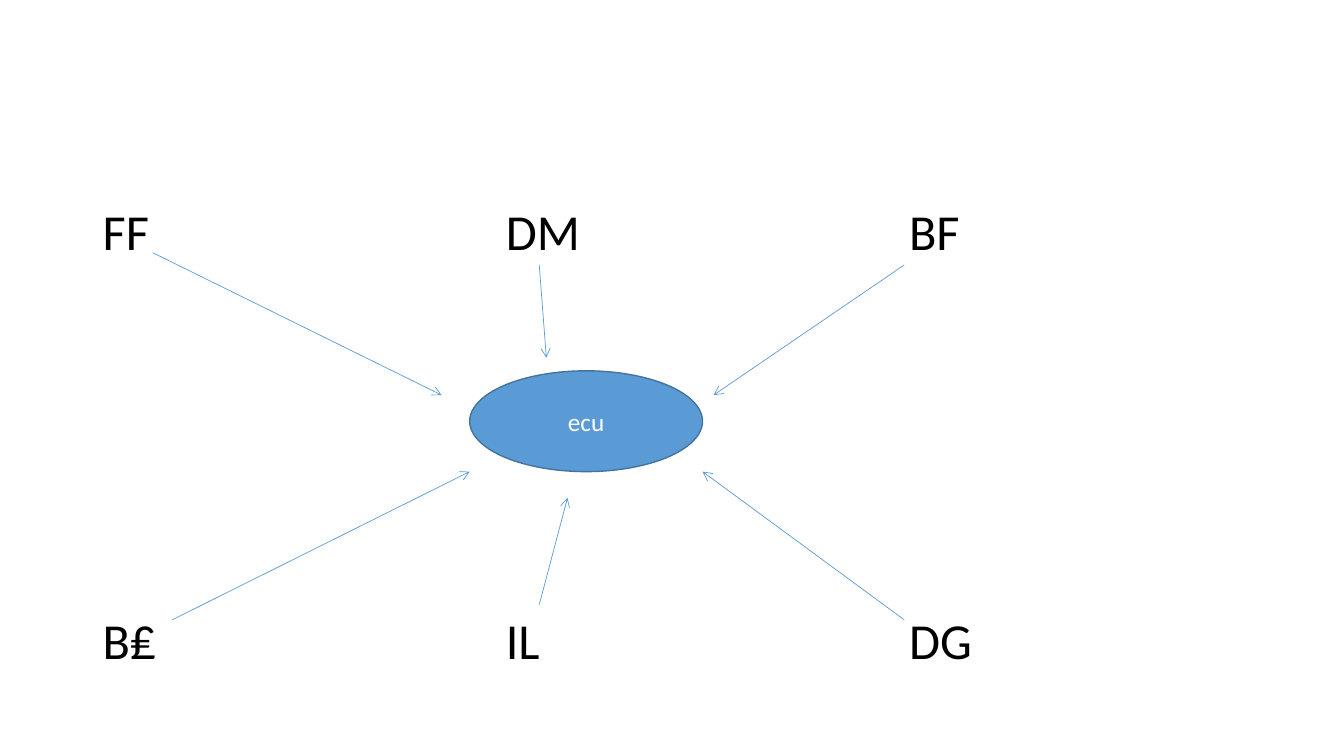
from dataclasses import dataclass
from lxml.etree import SubElement
from pptx import Presentation
from pptx.dml.color import RGBColor
from pptx.enum.shapes import MSO_CONNECTOR, MSO_SHAPE
from pptx.enum.text import MSO_ANCHOR, PP_ALIGN
from pptx.oxml.ns import qn
from pptx.util import Inches, Pt


@dataclass(frozen=True)
class Theme:
    """Colours, type sizes and line widths of the slide."""
    font: str = "Calibri"
    text: RGBColor = RGBColor(0x00, 0x00, 0x00)
    accent: RGBColor = RGBColor(0x5B, 0x9B, 0xD5)
    outline: RGBColor = RGBColor(0x43, 0x73, 0x9E)
    on_accent: RGBColor = RGBColor(0xFF, 0xFF, 0xFF)
    currency_size: Pt = Pt(36)
    hub_size: Pt = Pt(18)
    arrow_width: Pt = Pt(0.5)
    outline_width: Pt = Pt(1)


def apply_format(target, values):
    """Set every attribute named in the format values."""
    for name, value in values.items():
        setattr(target, name, value)


class DiagramSlide:
    """Draws on one slide over a grid of 40 columns by 22.5 rows."""

    def __init__(self, presentation, theme):
        """Add a blank slide and work out the grid unit."""
        self.theme = theme
        self.slide = presentation.slides.add_slide(presentation.slide_layouts[6])
        self.unit = presentation.slide_width / 40

    def grid(self, *cells):
        """Turn columns and rows into slide lengths."""
        return [round(cell * self.unit) for cell in cells]

    def add_text(self, paragraph, text, size, color):
        """Put formatted text in a paragraph."""
        run = paragraph.add_run()
        run.text = text
        apply_format(run.font, {"name": self.theme.font, "size": size})
        run.font.color.rgb = color

    def tabbed_rows(self, box, rows, tab_stops, row_gap):
        """Lay out rows of labels aligned on tab stops."""
        frame = self.slide.shapes.add_textbox(*self.grid(*box)).text_frame
        frame.word_wrap = True
        for index, labels in enumerate(rows):
            paragraph = frame.add_paragraph() if index else frame.paragraphs[0]
            gap = self.grid(row_gap if index else 0)[0]
            apply_format(paragraph, {"line_spacing": 0.9, "space_before": Pt(gap / Pt(1))})
            tab_list = SubElement(paragraph._p.get_or_add_pPr(), qn("a:tabLst"))
            for stop in self.grid(*tab_stops):
                SubElement(tab_list, qn("a:tab"), pos=str(stop), algn="l")
            self.add_text(paragraph, "\t".join(labels), self.theme.currency_size, self.theme.text)

    def ellipse(self, box, text):
        """Draw a filled ellipse with centred text."""
        shape = self.slide.shapes.add_shape(MSO_SHAPE.OVAL, *self.grid(*box))
        shape.shadow.inherit = False
        shape.fill.solid()
        shape.fill.fore_color.rgb = self.theme.accent
        shape.line.color.rgb = self.theme.outline
        shape.line.width = self.theme.outline_width
        shape.text_frame.vertical_anchor = MSO_ANCHOR.MIDDLE
        paragraph = shape.text_frame.paragraphs[0]
        paragraph.alignment = PP_ALIGN.CENTER
        self.add_text(paragraph, text, self.theme.hub_size, self.theme.on_accent)

    def arrow(self, start, end):
        """Draw a thin line with an open arrowhead at its end."""
        connector = self.slide.shapes.add_connector(
            MSO_CONNECTOR.STRAIGHT, *self.grid(*start, *end))
        connector.line.color.rgb = self.theme.accent
        connector.line.width = self.theme.arrow_width
        properties = connector._element.spPr
        SubElement(properties.get_or_add_ln(), qn("a:tailEnd"), type="arrow")
        SubElement(properties, qn("a:effectLst"))


def main():
    """Build the currency basket slide."""
    presentation = Presentation()
    apply_format(presentation, {"slide_width": Inches(13.33), "slide_height": Inches(7.5)})
    diagram = DiagramSlide(presentation, Theme())
    currencies = [("FF", "DM", "BF"), ("B₤", "IL", "DG")]
    diagram.tabbed_rows((2.76, 6, 34.5, 14.28), currencies, (12, 24), 10.58)

    left, top, width, height = hub = (13.98, 11.04, 6.93, 3)
    diagram.ellipse(hub, "ecu")
    bottom = top + height
    arrows = [
        ((4.56, 7.53), (13.14, 11.76)),
        ((16.05, 7.89), (16.26, 10.65)),
        ((26.91, 7.89), (21.24, 11.76)),
        ((5.13, 18.45), (left, bottom)),
        ((16.05, 18), (16.89, 14.82)),
        ((26.91, 18.45), (left + width, bottom)),
    ]
    for start, end in arrows:
        diagram.arrow(start, end)
    presentation.save("out.pptx")


if __name__ == "__main__":
    main()
